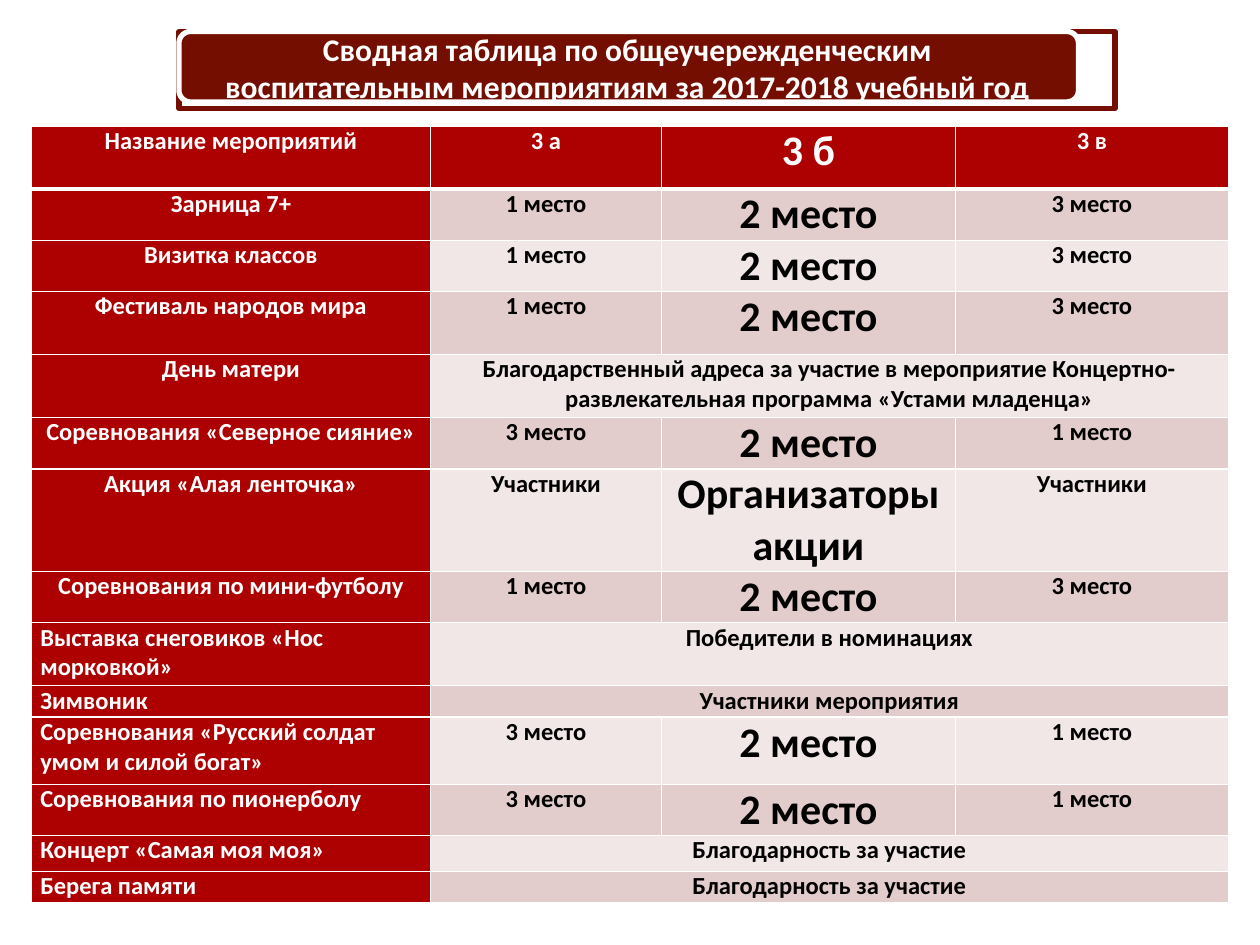
import dataclasses
import typing

import pptx
import pptx.dml.color
import pptx.enum.shapes
import pptx.enum.text
import pptx.oxml
import pptx.oxml.ns
import pptx.util

SLIDE_W, SLIDE_H = 10, 7.5
UNIT = SLIDE_W / 60
FONT = "Calibri"
WHITE, BLACK, RED, MAROON = "FFFFFF", "000000", "AD0101", "730E00"
BANDS = ("F1E7E7", "E3CCCC")
COLUMNS = (19, 11, 14, 13)
CENTER = pptx.enum.text.PP_ALIGN.CENTER
LEFT = pptx.enum.text.PP_ALIGN.LEFT
SHAPES = pptx.enum.shapes.MSO_SHAPE


@dataclasses.dataclass
class Event:
    name: str
    results: typing.Tuple[str, ...]
    height: float
    align: pptx.enum.text.PP_ALIGN = CENTER


@dataclasses.dataclass
class Panel:
    kind: SHAPES
    width: float
    height: float
    fill: str
    line: str
    opacity: int = 100


PANELS = (
    Panel(SHAPES.RECTANGLE, 7.43, 0.61, WHITE, MAROON, 90),
    Panel(SHAPES.ROUNDED_RECTANGLE, 7.14, 0.56, MAROON, WHITE),
)
EVENTS = (
    Event("Название мероприятий", ("3 а", "3 б", "3 в"), 3),
    Event("Зарница 7+", ("1 место", "2 место", "3 место"), 1.5),
    Event("Визитка классов", ("1 место", "2 место", "3 место"), 1.5),
    Event("Фестиваль народов мира", ("1 место", "2 место", "3 место"), 3),
    Event("День матери", ("Благодарственный адреса за участие в мероприятие "
                          "Концертно-развлекательная программа «Устами младенца»",), 3),
    Event("Соревнования «Северное сияние»", ("3 место", "2 место", "1 место"), 2.2),
    Event("Акция «Алая ленточка»", ("Участники", "Организаторы акции", "Участники"), 3),
    Event("Соревнования по мини-футболу", ("1 место", "2 место", "3 место"), 1.7),
    Event("Выставка снеговиков «Нос морковкой»", ("Победители в номинациях",), 3, LEFT),
    Event("Зимвоник", ("Участники мероприятия",), 1.5, LEFT),
    Event("Соревнования «Русский солдат умом и силой богат»",
          ("3 место", "2 место", "1 место"), 3.2, LEFT),
    Event("Соревнования по пионерболу", ("3 место", "2 место", "1 место"), 1.5, LEFT),
    Event("Концерт «Самая моя моя»", ("Благодарность за участие",), 1.7, LEFT),
    Event("Берега памяти", ("Благодарность за участие",), 1.5, LEFT),
)


def inches(value: float) -> pptx.util.Length:
    return pptx.util.Inches(value)


def rgb(color: str) -> pptx.dml.color.RGBColor:
    return pptx.dml.color.RGBColor.from_string(color)


def set_text(tf, text: str, size: float, color: str, align) -> None:
    tf.text = text
    p = tf.paragraphs[0]
    p.alignment = align
    for r in p.runs:
        r.font.name = FONT
        r.font.size = pptx.util.Pt(size)
        r.font.bold = True
        r.font.color.rgb = rgb(color)


def add_panel(s, panel: Panel) -> None:
    sp = s.shapes.add_shape(panel.kind, inches(1.42), inches(0.25),
                            inches(panel.width), inches(panel.height))
    sp.shadow.inherit = False
    sp.fill.solid()
    sp.fill.fore_color.rgb = rgb(panel.fill)
    sp.line.color.rgb = rgb(panel.line)
    sp.line.width = pptx.util.Pt(3)
    if panel.opacity < 100:
        color = sp.element.spPr.find(".//" + pptx.oxml.ns.qn("a:srgbClr"))
        color.append(pptx.oxml.parse_xml(
            f'<a:alpha {pptx.oxml.ns.nsdecls("a")} val="{panel.opacity * 1000}"/>'))


def set_title(s, text: str) -> None:
    sp = s.shapes.title
    sp.left, sp.top = inches(1.44), inches(0.28)
    sp.width, sp.height = inches(7.08), inches(0.51)
    tf = sp.text_frame
    tf.word_wrap = True
    tf.auto_size = pptx.enum.text.MSO_AUTO_SIZE.NONE
    tf.vertical_anchor = pptx.enum.text.MSO_ANCHOR.MIDDLE
    tf.margin_left = tf.margin_right = inches(0.2)
    tf.margin_top = tf.margin_bottom = 0
    set_text(tf, text, 18, WHITE, CENTER)
    sp.element.getparent().append(sp.element)


def style_cell(cell, fill: str, widths: typing.Dict[str, float]) -> None:
    cell.margin_left = cell.margin_right = inches(0.07)
    cell.margin_top = cell.margin_bottom = 0
    cell.fill.solid()
    cell.fill.fore_color.rgb = rgb(fill)
    tcPr = cell._tc.get_or_add_tcPr()
    for i, (side, width) in enumerate(widths.items()):
        tcPr.insert(i, pptx.oxml.parse_xml(
            f'<a:ln{side} {pptx.oxml.ns.nsdecls("a")} w="{pptx.util.Pt(width)}">'
            f'<a:solidFill><a:srgbClr val="{WHITE}"/></a:solidFill></a:ln{side}>'))


def add_results(s, events: typing.Sequence[Event]) -> None:
    table = s.shapes.add_table(
        len(events), len(COLUMNS), inches(1.5 * UNIT), inches(6 * UNIT),
        inches(sum(COLUMNS) * UNIT), inches(sum(e.height for e in events) * UNIT)).table
    table.horz_banding = False
    for column, width in zip(table.columns, COLUMNS):
        column.width = inches(width * UNIT)
    for i, event in enumerate(events):
        table.rows[i].height = inches(event.height * UNIT)
        widths = {"L": 1, "R": 1, "T": 3 if i == 1 else 1, "B": 3 if i == 0 else 1}
        for j in range(len(COLUMNS)):
            fill = RED if i == 0 or j == 0 else BANDS[i % 2]
            style_cell(table.cell(i, j), fill, widths)
        if len(event.results) == 1:
            table.cell(i, 1).merge(table.cell(i, len(COLUMNS) - 1))
        for j, text in enumerate((event.name, *event.results)):
            set_text(table.cell(i, j).text_frame, text, 24 if j == 2 else 14,
                     WHITE if i == 0 or j == 0 else BLACK,
                     event.align if j == 0 else CENTER)


def main() -> None:
    prs = pptx.Presentation()
    prs.slide_width, prs.slide_height = inches(SLIDE_W), inches(SLIDE_H)
    s = prs.slides.add_slide(prs.slide_layouts[5])
    for panel in PANELS:
        add_panel(s, panel)
    set_title(s, "Сводная таблица по общеучережденческим воспитательным "
                 "мероприятиям за 2017-2018 учебный год")
    add_results(s, EVENTS)
    prs.save("out.pptx")


if __name__ == "__main__":
    main()
